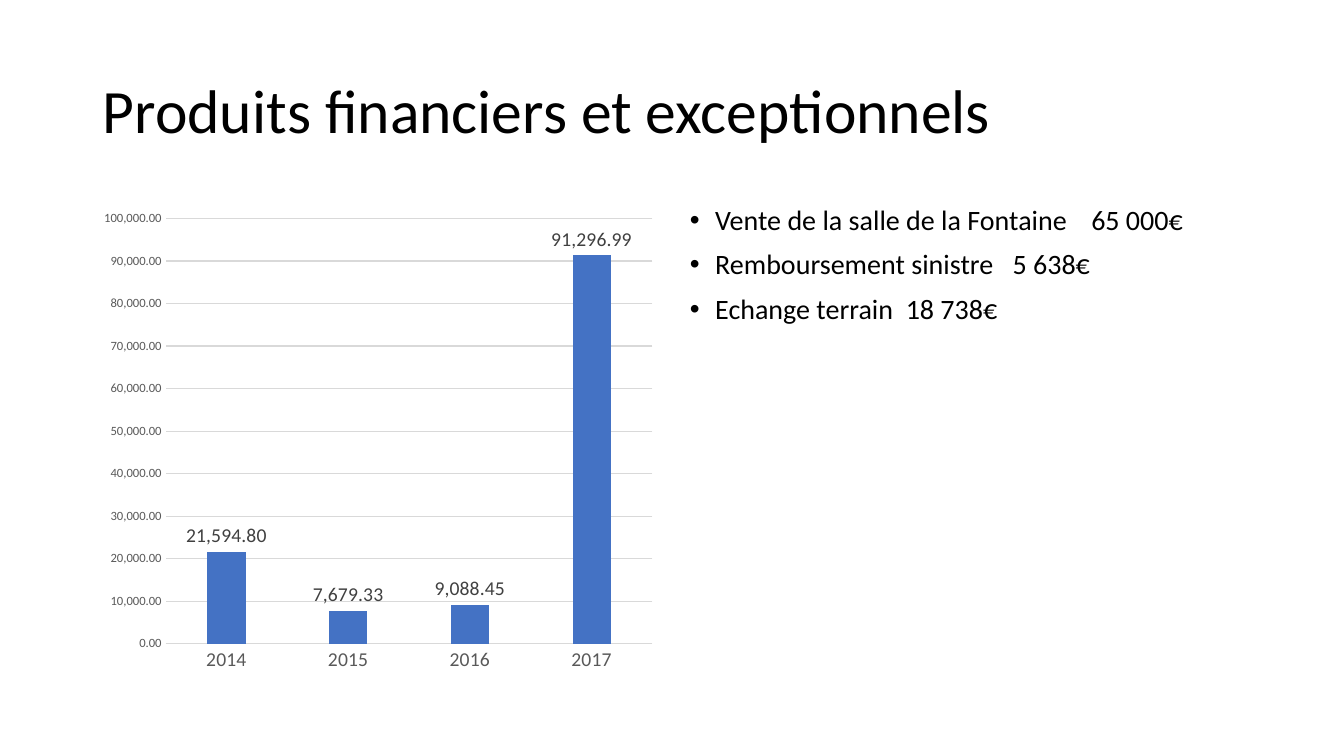
from lxml.etree import SubElement
from pptx import Presentation
from pptx.chart.data import CategoryChartData
from pptx.dml.color import RGBColor
from pptx.enum.chart import XL_CHART_TYPE as ChartType, XL_LABEL_POSITION as LabelPosition
from pptx.enum.chart import XL_TICK_MARK as TickMark
from pptx.enum.text import MSO_ANCHOR as Anchor, PP_ALIGN as Align
from pptx.oxml.ns import qn
from pptx.util import Inches, Pt

BLACK = RGBColor(0x00, 0x00, 0x00)
DARK_GREY = RGBColor(0x40, 0x40, 0x40)
GREY = RGBColor(0x59, 0x59, 0x59)
LIGHT_GREY = RGBColor(0xD9, 0xD9, 0xD9)
BLUE = RGBColor(0x44, 0x72, 0xC4)
FONT = "Calibri"

WIDTH, HEIGHT = 13.33, 7.5
MARGIN, GUTTER = 0.92, 0.16
CONTENT_WIDTH = WIDTH - 2 * MARGIN
COLUMN_WIDTH = (CONTENT_WIDTH - GUTTER) / 2
TITLE_TOP, TITLE_HEIGHT = 0.4, 1.45
BODY_TOP, BODY_HEIGHT = 2, 4.76

TITLE = "Produits financiers et exceptionnels"
INCOME = {"2014": 21594.80, "2015": 7679.33, "2016": 9088.45, "2017": 91296.99}
RECEIPTS = [
    ("Vente de la salle de la Fontaine", "65 000€", 3.98),
    ("Remboursement sinistre", "5 638€", 3.2),
    ("Echange terrain", "18 738€", 2.14),
]


def column_box(column):
    """Return left, top, width and height of a body column."""
    left = MARGIN + column * (COLUMN_WIDTH + GUTTER)
    return [Inches(length) for length in (left, BODY_TOP, COLUMN_WIDTH, BODY_HEIGHT)]


def style_font(font, size, color):
    """Set typeface, size and colour."""
    font.name, font.size, font.bold = FONT, Pt(size), False
    font.color.rgb = color


def add_run(paragraph, text, size):
    """Add one black run of text."""
    run = paragraph.add_run()
    run.text = text
    style_font(run.font, size, BLACK)


def fill_title(title):
    """Place the title placeholder and write its text."""
    title.left, title.top = Inches(MARGIN), Inches(TITLE_TOP)
    title.width, title.height = Inches(CONTENT_WIDTH), Inches(TITLE_HEIGHT)
    frame = title.text_frame
    frame.word_wrap, frame.vertical_anchor = True, Anchor.MIDDLE
    heading = frame.paragraphs[0]
    heading.alignment, heading.line_spacing = Align.LEFT, 0.9
    add_run(heading, TITLE, 44)


def format_bullet(paragraph, tab_stop):
    """Give a paragraph its bullet, hanging indent and tab stop."""
    paragraph.line_spacing, paragraph.space_before = 0.9, Pt(10)
    properties = paragraph._p.get_or_add_pPr()
    properties.set("marL", str(Inches(0.25)))
    properties.set("indent", str(-Inches(0.25)))
    SubElement(properties, qn("a:buFont"), typeface="Arial")
    SubElement(properties, qn("a:buChar"), char="•")
    tabs = SubElement(properties, qn("a:tabLst"))
    SubElement(tabs, qn("a:tab"), pos=str(Inches(tab_stop)), algn="l")


def add_receipts(slide):
    """Add the bulleted list of exceptional receipts."""
    frame = slide.shapes.add_textbox(*column_box(1)).text_frame
    frame.word_wrap = True
    for index, (label, amount, tab_stop) in enumerate(RECEIPTS):
        receipt = frame.add_paragraph() if index else frame.paragraphs[0]
        format_bullet(receipt, tab_stop)
        add_run(receipt, f"{label}\t{amount}", 20)


def format_axes(chart):
    """Format the year axis and the amount axis."""
    years, amounts = chart.category_axis, chart.value_axis
    for axis, size in ((years, 14), (amounts, 9)):
        axis.major_tick_mark = axis.minor_tick_mark = TickMark.NONE
        style_font(axis.tick_labels.font, size, GREY)
    amounts.minimum_scale, amounts.maximum_scale, amounts.major_unit = 0, 100000, 10000
    amounts.tick_labels.number_format = "#,##0.00"
    amounts.tick_labels.number_format_is_linked = False
    amounts.format.line.fill.background()
    for line in (years.format.line, amounts.major_gridlines.format.line):
        line.color.rgb, line.width = LIGHT_GREY, Pt(0.75)


def add_income_chart(slide):
    """Add the column chart of yearly income."""
    data = CategoryChartData(number_format="#,##0.00")
    data.categories = list(INCOME)
    data.add_series("Series 1", list(INCOME.values()))
    chart = slide.shapes.add_chart(ChartType.COLUMN_CLUSTERED, *column_box(0), data).chart
    chart.has_legend = chart.has_title = False
    style_font(chart.font, 10, BLACK)
    format_axes(chart)
    plot = chart.plots[0]
    plot.gap_width, plot.overlap, plot.vary_by_categories = 219, -27, False
    income = plot.series[0]
    income.format.fill.solid()
    income.format.fill.fore_color.rgb = BLUE
    labels = income.data_labels
    labels.show_value, labels.position = True, LabelPosition.OUTSIDE_END
    style_font(labels.font, 14, DARK_GREY)


def main():
    """Build and save the slide."""
    deck = Presentation()
    deck.slide_width, deck.slide_height = Inches(WIDTH), Inches(HEIGHT)
    slide = deck.slides.add_slide(deck.slide_layouts.get_by_name("Title Only"))
    fill_title(slide.shapes.title)
    add_receipts(slide)
    add_income_chart(slide)
    deck.save("out.pptx")


if __name__ == "__main__":
    main()
